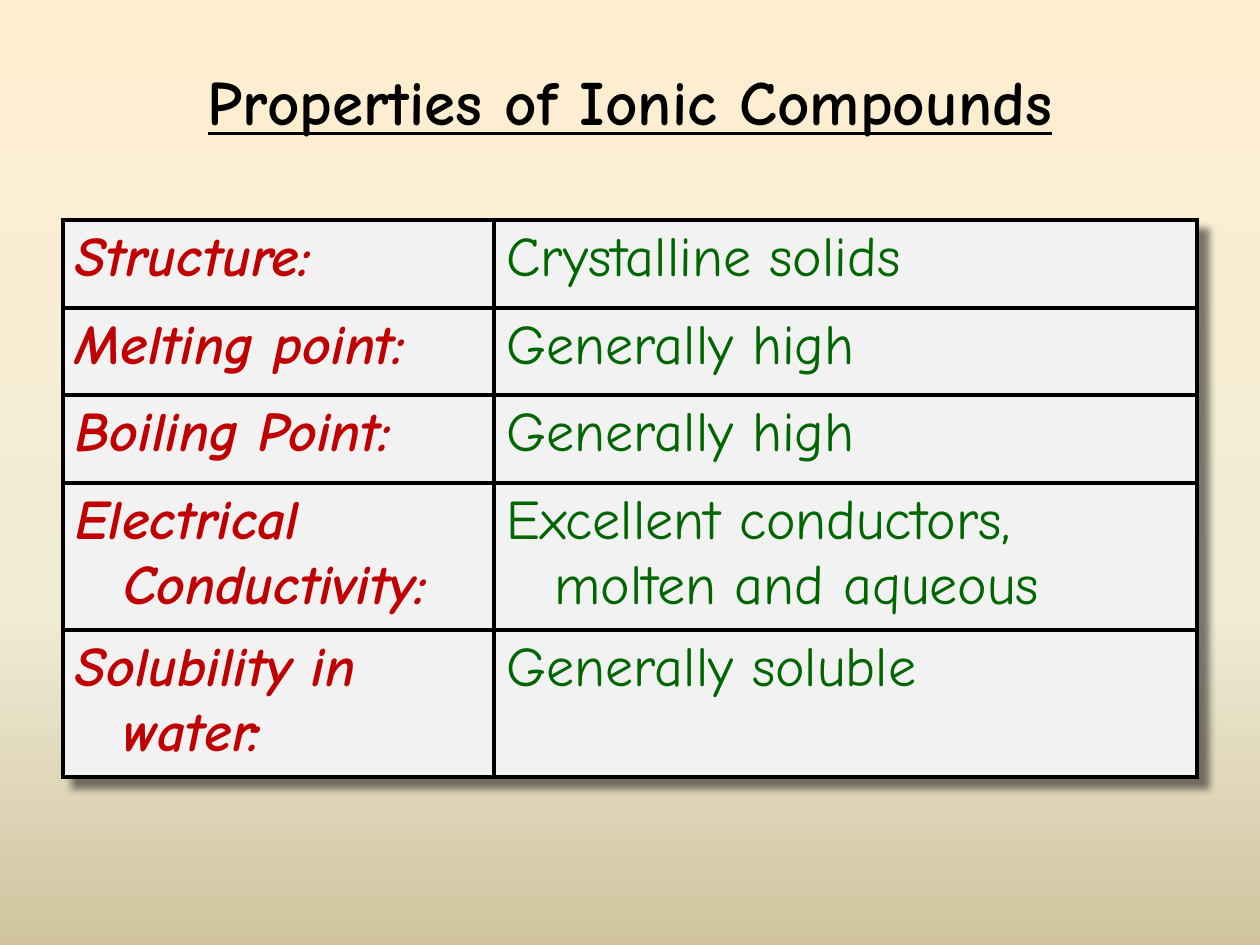
from copy import deepcopy

from lxml import etree
from pptx import Presentation
from pptx.dml.color import RGBColor
from pptx.enum.text import MSO_ANCHOR, PP_ALIGN
from pptx.oxml import parse_xml
from pptx.oxml.ns import qn
from pptx.util import Pt

CENTER, MIDDLE = PP_ALIGN.CENTER, MSO_ANCHOR.MIDDLE
FONT = "Comic Neue"
A_NS = 'xmlns:a="http://schemas.openxmlformats.org/drawingml/2006/main"'
COLORS = {
    "sky": "FFEFD1", "cream": "F0EBD5", "sand": "D1C39F",
    "black": "000000", "label": "C00000", "value": "006600", "cell": "F2F2F2",
}


def px(length):
    return round(length * 914400 / 126)


def add_text(para, text, color, formats):
    span = para.add_run()
    span.text = text
    span.font.color.rgb = RGBColor.from_string(COLORS[color])
    for name, value in formats.items():
        setattr(span.font, name, value)


deck = Presentation()
deck.slide_width, deck.slide_height = px(1260), px(945)
page = deck.slides.add_slide(deck.slide_layouts[6])

# Background: three-stop vertical gradient
backdrop = page.background.fill
backdrop.gradient()
backdrop.gradient_angle = 270
stop_list = next(page.element.iter(qn("a:gsLst")))
stop_list.append(deepcopy(stop_list[0]))
stops = [("sky", 0), ("cream", 0.65), ("sand", 1)]
for stop, (color, position) in zip(backdrop.gradient_stops, stops):
    stop.color.rgb = RGBColor.from_string(COLORS[color])
    stop.position = position

# Title
box = page.shapes.add_textbox(px(94), px(21), px(1072), px(158))
box.text_frame.word_wrap = True
box.text_frame.vertical_anchor = MIDDLE
para = box.text_frame.paragraphs[0]
para.alignment = CENTER
add_text(para, "Properties of Ionic Compounds", "black",
         {"name": FONT, "size": Pt(36), "bold": True, "underline": True})

# Properties table
properties = [
    ("Structure:", "Crystalline solids", 88),
    ("Melting point:", "Generally high", 87),
    ("Boiling Point:", "Generally high", 88),
    ("Electrical Conductivity:", "Excellent conductors, molten and aqueous", 142),
    ("Solubility in water:", "Generally soluble", 141),
]
column_formats = [
    ("label", 431, {"name": FONT, "size": Pt(32), "bold": True, "italic": True}),
    ("value", 703, {"name": FONT, "size": Pt(32), "bold": False, "italic": False}),
]
height = sum(row[2] for row in properties)
frame = page.shapes.add_table(len(properties), 2, px(63), px(220), px(1134), px(height))
table = frame.table
table.first_row = table.horz_banding = False

for column, (color, width, formats) in enumerate(column_formats):
    table.columns[column].width = px(width)
    for row, entry in enumerate(properties):
        table.rows[row].height = px(entry[2])
        cell = table.cell(row, column)

        # Cell borders come before the fill
        cell_format = cell._tc.get_or_add_tcPr()
        for side in ("lnL", "lnR", "lnT", "lnB"):
            line = etree.SubElement(cell_format, qn(f"a:{side}"), w=str(Pt(2.25)))
            solid = etree.SubElement(line, qn("a:solidFill"))
            etree.SubElement(solid, qn("a:srgbClr"), val=COLORS["black"])
        cell.fill.solid()
        cell.fill.fore_color.rgb = RGBColor.from_string(COLORS["cell"])

        # Hanging indent for wrapped lines
        para = cell.text_frame.paragraphs[0]
        indent = para._p.get_or_add_pPr()
        indent.set("marL", str(px(48)))
        indent.set("indent", str(px(-48)))
        add_text(para, entry[column], color, formats)

# Table shadow
table._tbl.tblPr.insert(0, parse_xml(
    f'<a:effectLst {A_NS}><a:outerShdw blurRad="{px(7)}" dist="{px(14)}" '
    f'dir="2700000" algn="tl" rotWithShape="0"><a:srgbClr val="{COLORS["black"]}">'
    '<a:alpha val="50000"/></a:srgbClr></a:outerShdw></a:effectLst>'))

deck.save("out.pptx")
